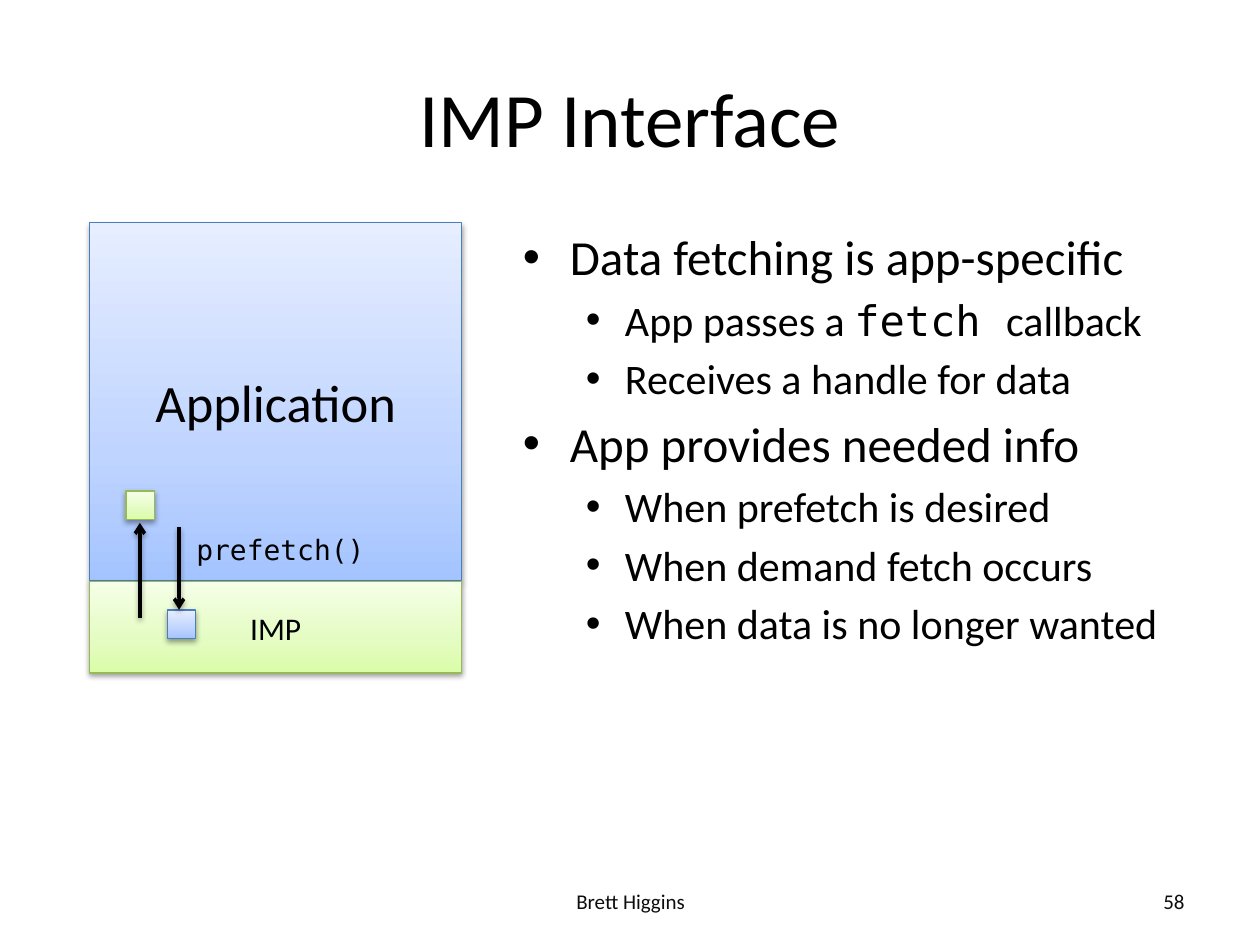
import copy
import pptx
import pptx.util
import pptx.dml.color
import pptx.enum.shapes
import pptx.enum.text
import pptx.oxml
import pptx.oxml.ns
from lxml import etree

Cm = pptx.util.Cm
Pt = pptx.util.Pt
qn = pptx.oxml.ns.qn
ALIGN = pptx.enum.text.PP_ALIGN
ANCHOR = pptx.enum.text.MSO_ANCHOR

SANS, MONO = "Calibri", "DejaVu Sans Mono"
COLORS = {
    "text": "000000", "foot": "0D0D0D",
    "blue": "A4C4FF", "blue mid": "BFD4FF", "blue top": "E6EEFF", "blue edge": "4B7EBC",
    "green": "DAFDA7", "green mid": "E4FCC2", "green top": "F5FFE7", "green edge": "98B955",
}
LABELS = [
    ("IMP Interface", (1.27, 0.76, 22.86, 3.18), 44, SANS, "text", ALIGN.CENTER, ANCHOR.MIDDLE, True),
    ("58", (18.21, 17.65, 5.92, 1.02), 12, SANS, "foot", ALIGN.RIGHT, ANCHOR.MIDDLE, True),
    ("Brett Higgins", (8.69, 17.65, 8.05, 1.02), 12, SANS, "foot", ALIGN.CENTER, ANCHOR.MIDDLE, True),
    ("prefetch()", (3.71, 10.62, 3.94, 0.94), 16, MONO, "text", ALIGN.LEFT, ANCHOR.TOP, False),
]
POINTS = [
    (0, [("Data fetching is app-specific", SANS)]),
    (1, [("App passes a ", SANS), ("fetch ", MONO), ("callback", SANS)]),
    (1, [("Receives a handle for data", SANS)]),
    (0, [("App provides needed info", SANS)]),
    (1, [("When prefetch is desired", SANS)]),
    (1, [("When demand fetch occurs", SANS)]),
    (1, [("When data is no longer wanted", SANS)]),
]
LEVELS = [(28, 0.95, 0.95), (24, 2.06, 0.79)]
BOXES = [
    ("Application", (1.81, 4.49, 7.5, 7.22), "blue", 30),
    ("IMP", (1.81, 11.73, 7.5, 1.84), "green", 18),
    ("", (3.38, 12.3, 0.57, 0.57), "blue", 0),
    ("", (2.54, 9.9, 0.57, 0.57), "green", 0),
]
ARROWS = [(3.61, 10.62, 12.29), (2.82, 12.45, 10.54)]


def tint(name):
    return pptx.dml.color.RGBColor.from_string(COLORS[name])


def style(run, size, face, color):
    run.font.size = Pt(size)
    run.font.name = face
    run.font.color.rgb = tint(color)


def shade(shape):
    props = shape._element.spPr
    effects = props.find(qn("a:effectLst"))
    if effects is None:
        effects = etree.SubElement(props, qn("a:effectLst"))
    drop = etree.SubElement(effects, qn("a:outerShdw"), blurRad="40000",
                            dist="20000", dir="5400000", rotWithShape="0")
    black = etree.SubElement(drop, qn("a:srgbClr"), val="000000")
    etree.SubElement(black, qn("a:alpha"), val="38000")


def label(slide, text, place, size, face, color, align, anchor, wrap):
    frame = slide.shapes.add_textbox(*map(Cm, place)).text_frame
    frame.word_wrap = wrap
    frame.vertical_anchor = anchor
    frame.text = text
    line = frame.paragraphs[0]
    line.alignment = align
    style(line.runs[0], size, face, color)


def bullets(slide):
    frame = slide.shapes.add_textbox(*map(Cm, (10.29, 4.45, 13.84, 12.57))).text_frame
    frame.word_wrap = True
    for row, (level, parts) in enumerate(POINTS):
        line = frame.add_paragraph() if row else frame.paragraphs[0]
        size, left, hang = LEVELS[level]
        line.level = level
        props = line._p.get_or_add_pPr()
        props.set("marL", str(Cm(left)))
        props.set("indent", str(-Cm(hang)))
        if row:
            space = etree.SubElement(props, qn("a:spcBef"))
            etree.SubElement(space, qn("a:spcPct"), val="20000")
        etree.SubElement(props, qn("a:buFont"), typeface="Arial")
        etree.SubElement(props, qn("a:buChar"), char="•")
        for text, face in parts:
            run = line.add_run()
            run.text = text
            style(run, size, face, "text")


def box(slide, text, place, hue, size):
    shape = slide.shapes.add_shape(pptx.enum.shapes.MSO_SHAPE.RECTANGLE, *map(Cm, place))
    shape.fill.gradient()
    shape.fill.gradient_angle = 90
    stops = shape._element.spPr.find(".//" + qn("a:gsLst"))
    stops.append(copy.deepcopy(stops[0]))
    marks = [(0, hue), (0.35, hue + " mid"), (1, hue + " top")]
    for stop, (spot, name) in zip(shape.fill.gradient_stops, marks):
        stop.position = spot
        stop.color.rgb = tint(name)
    shape.line.color.rgb = tint(hue + " edge")
    shape.line.width = Pt(0.75)
    shape.shadow.inherit = False
    shade(shape)
    if text:
        frame = shape.text_frame
        frame.text = text
        frame.vertical_anchor = ANCHOR.MIDDLE
        frame.paragraphs[0].alignment = ALIGN.CENTER
        style(frame.paragraphs[0].runs[0], size, SANS, "text")


def arrow(slide, x, start, end):
    line = slide.shapes.add_connector(pptx.enum.shapes.MSO_CONNECTOR.STRAIGHT,
                                      Cm(x), Cm(start), Cm(x), Cm(end))
    line.line.color.rgb = tint("text")
    line.line.width = Pt(2)
    etree.SubElement(line.line._get_or_add_ln(), qn("a:tailEnd"), type="arrow")
    shade(line)


def main():
    deck = pptx.Presentation()
    deck.slide_width, deck.slide_height = Cm(25.4), Cm(19.05)
    slide = deck.slides.add_slide(deck.slide_layouts[6])
    bullets(slide)
    for item in BOXES:
        box(slide, *item)
    for item in ARROWS:
        arrow(slide, *item)
    for item in LABELS:
        label(slide, *item)
    deck.save("out.pptx")


if __name__ == "__main__":
    main()
